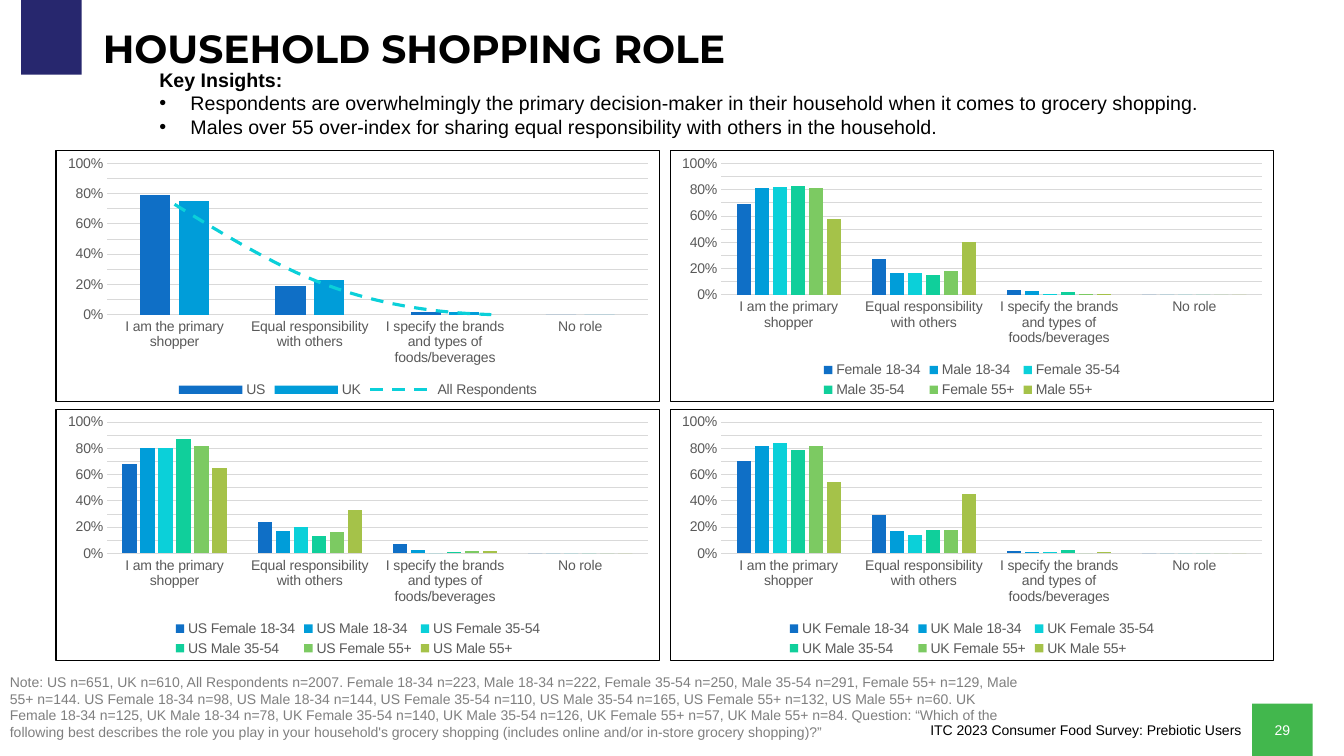
from dataclasses import dataclass

from lxml import etree
from pptx import Presentation
from pptx.chart.data import CategoryChartData
from pptx.dml.color import RGBColor
from pptx.enum.chart import XL_CHART_TYPE, XL_LEGEND_POSITION, XL_MARKER_STYLE, XL_TICK_MARK
from pptx.enum.dml import MSO_LINE
from pptx.enum.shapes import MSO_SHAPE
from pptx.enum.text import MSO_ANCHOR, MSO_AUTO_SIZE, PP_ALIGN
from pptx.oxml import parse_xml
from pptx.oxml.ns import nsdecls, qn
from pptx.util import Inches, Pt

COLUMNS = XL_CHART_TYPE.COLUMN_CLUSTERED
LEGEND_BOTTOM = XL_LEGEND_POSITION.BOTTOM
NO_MARKER = XL_MARKER_STYLE.NONE
NO_TICK = XL_TICK_MARK.NONE
DASH = MSO_LINE.DASH
RECTANGLE = MSO_SHAPE.RECTANGLE
TOP, MIDDLE = MSO_ANCHOR.TOP, MSO_ANCHOR.MIDDLE
NO_AUTOFIT = MSO_AUTO_SIZE.NONE
LEFT, CENTER, RIGHT = PP_ALIGN.LEFT, PP_ALIGN.CENTER, PP_ALIGN.RIGHT

SLIDE_WIDTH, SLIDE_HEIGHT = Inches(13.33), Inches(7.5)


@dataclass(frozen=True)
class Theme:
    heading_font: str = "Montserrat"
    body_font: str = "Arial"
    title_size: int = 28
    body_size: int = 14
    small_size: int = 10
    black: str = "000000"
    white: str = "FFFFFF"
    navy: str = "27276E"
    green: str = "42B74D"
    note_gray: str = "7F7F7F"
    label_gray: str = "595959"
    grid_gray: str = "D9D9D9"
    series: tuple = ("0F6FC6", "009DD9", "0BD0D9", "10CF9B", "7CCA62", "A5C249")


THEME = Theme()

# Content
INSIGHTS = (
    "Respondents are overwhelmingly the primary decision-maker in their household "
    "when it comes to grocery shopping.",
    "Males over 55 over-index for sharing equal responsibility with others in the household.",
)
NOTE = (
    "Note: US n=651, UK n=610, All Respondents n=2007. Female 18-34 n=223, Male 18-34 n=222, "
    "Female 35-54 n=250, Male 35-54 n=291, Female 55+ n=129, Male 55+ n=144. "
    "US Female 18-34 n=98, US Male 18-34 n=144, US Female 35-54 n=110, US Male 35-54 n=165, "
    "US Female 55+ n=132, US Male 55+ n=60. UK Female 18-34 n=125, UK Male 18-34 n=78, "
    "UK Female 35-54 n=140, UK Male 35-54 n=126, UK Female 55+ n=57, UK Male 55+ n=84. "
    "Question: “Which of the following best describes the role you play in your household's "
    "grocery shopping (includes online and/or in-store grocery shopping)?”"
)
ROLES = ("I am the primary shopper", "Equal responsibility with others",
         "I specify the brands and types of foods/beverages", "No role")
GROUPS = ("Female 18-34", "Male 18-34", "Female 35-54", "Male 35-54", "Female 55+", "Male 55+")
COUNTRY_SERIES = {
    "US": (0.79, 0.19, 0.02, 0),
    "UK": (0.75, 0.23, 0.02, 0),
    "All Respondents": (0.73, 0.24, 0.02, 0),
}
GROUP_VALUES = (
    (0.69, 0.27, 0.04, 0), (0.81, 0.17, 0.03, 0), (0.82, 0.17, 0.01, 0),
    (0.83, 0.15, 0.02, 0), (0.81, 0.18, 0.01, 0), (0.58, 0.4, 0.01, 0),
)
US_VALUES = (
    (0.68, 0.24, 0.07, 0), (0.8, 0.17, 0.03, 0), (0.8, 0.2, 0, 0),
    (0.87, 0.13, 0.01, 0), (0.82, 0.16, 0.02, 0), (0.65, 0.33, 0.02, 0),
)
UK_VALUES = (
    (0.7, 0.29, 0.02, 0), (0.82, 0.17, 0.01, 0), (0.84, 0.14, 0.01, 0),
    (0.79, 0.18, 0.03, 0), (0.82, 0.18, 0, 0), (0.54, 0.45, 0.01, 0),
)


def place(left, top, width, height):
    """Turn percentages of the slide into lengths."""
    return (int(SLIDE_WIDTH * left / 100), int(SLIDE_HEIGHT * top / 100),
            int(SLIDE_WIDTH * width / 100), int(SLIDE_HEIGHT * height / 100))


def chart_cell(column, row):
    return place(4.13 + 45.69 * column, 19.87 + 34.2 * row, 45.01, 33.33)


def style_font(font, size, color, bold=False, name=THEME.body_font):
    font.name, font.size, font.bold = name, Pt(size), bold
    font.color.rgb = RGBColor.from_string(color)


def write(paragraph, text, size, color, align=LEFT, **font_options):
    paragraph.alignment = align
    run = paragraph.add_run()
    run.text = text
    style_font(run.font, size, color, **font_options)


def prepare_frame(shape, anchor=TOP):
    frame = shape.text_frame
    frame.word_wrap, frame.auto_size, frame.vertical_anchor = True, NO_AUTOFIT, anchor
    return frame


def move(shape, area):
    shape.left, shape.top, shape.width, shape.height = area


def add_block(slide, area, color):
    block = slide.shapes.add_shape(RECTANGLE, *area)
    block.shadow.inherit = False
    block.fill.solid()
    block.fill.fore_color.rgb = RGBColor.from_string(color)
    block.line.fill.background()
    return block


def add_label(slide, area, text, color, align=LEFT):
    frame = prepare_frame(slide.shapes.add_textbox(*area))
    write(frame.paragraphs[0], text, THEME.small_size, color, align)


def set_bullet(paragraph, bulleted):
    properties = paragraph._p.get_or_add_pPr()
    indent = Inches(0.31) if bulleted else 0
    properties.set("marL", str(indent))
    properties.set("indent", str(-indent))
    if bulleted:
        color = etree.SubElement(properties, qn("a:buClr"))
        etree.SubElement(color, qn("a:srgbClr"), val=THEME.black)
        etree.SubElement(properties, qn("a:buFont"), typeface=THEME.body_font)
        etree.SubElement(properties, qn("a:buChar"), char="•")
    else:
        etree.SubElement(properties, qn("a:buNone"))


def fill_insights(body):
    frame = prepare_frame(body)
    for index, text in enumerate(("Key Insights:",) + INSIGHTS):
        paragraph = frame.add_paragraph() if index else frame.paragraphs[0]
        set_bullet(paragraph, bulleted=index > 0)
        paragraph.space_before = Pt(0)
        write(paragraph, text, THEME.body_size, THEME.black, bold=index == 0)


def style_axes(chart):
    category_axis, value_axis = chart.category_axis, chart.value_axis
    for axis in (category_axis, value_axis):
        axis.major_tick_mark = axis.minor_tick_mark = NO_TICK
        style_font(axis.tick_labels.font, THEME.small_size, THEME.label_gray)
    value_axis.minimum_scale, value_axis.maximum_scale = 0, 1
    value_axis.major_unit = 0.1
    value_axis.tick_labels.number_format = "0%"
    value_axis.tick_labels.number_format_is_linked = False
    value_axis.format.line.fill.background()
    for line in (category_axis.format.line, value_axis.major_gridlines.format.line):
        line.width = Pt(0.75)
        line.color.rgb = RGBColor.from_string(THEME.grid_gray)


def add_border(chart):
    border = parse_xml(
        f'<c:spPr {nsdecls("c", "a")}><a:noFill/><a:ln w="{int(Pt(0.75))}"><a:solidFill>'
        f'<a:srgbClr val="{THEME.black}"/></a:solidFill></a:ln></c:spPr>')
    chart._chartSpace.find(qn("c:chart")).addnext(border)


def turn_last_series_into_line(chart):
    bars = chart.plots[0]._element
    series = bars.findall(qn("c:ser"))[-1]
    for tag in ("c:invertIfNegative", "c:spPr"):
        for part in series.findall(qn(tag)):
            series.remove(part)
    line_plot = parse_xml(f'<c:lineChart {nsdecls("c")}><c:grouping val="standard"/>'
                          '<c:varyColors val="0"/><c:marker val="1"/></c:lineChart>')
    line_plot.insert(2, series)
    for axis in bars.findall(qn("c:axId")):
        etree.SubElement(line_plot, qn("c:axId"), val=axis.get("val"))
    bars.addnext(line_plot)

    trend = chart.plots[1].series[0]
    trend.smooth, trend.marker.style = True, NO_MARKER
    trend.format.line.width, trend.format.line.dash_style = Pt(2.25), DASH
    trend.format.line.color.rgb = RGBColor.from_string(THEME.series[2])


def add_role_chart(slide, area, series_values):
    data = CategoryChartData(number_format="0%")
    data.categories = ROLES
    for name, values in series_values.items():
        data.add_series(name, values)
    chart = slide.shapes.add_chart(COLUMNS, *area, data).chart
    style_font(chart.font, THEME.small_size, THEME.black)
    chart.has_title = False
    chart.has_legend = True
    chart.legend.position, chart.legend.include_in_layout = LEGEND_BOTTOM, False
    style_font(chart.legend.font, THEME.small_size, THEME.label_gray)
    plot = chart.plots[0]
    plot.gap_width, plot.overlap, plot.vary_by_categories = 219, -27, False
    for series, color in zip(plot.series, THEME.series):
        series.format.fill.solid()
        series.format.fill.fore_color.rgb = RGBColor.from_string(color)
    style_axes(chart)
    add_border(chart)
    return chart


def group_series(values, prefix=""):
    return {prefix + group: shares for group, shares in zip(GROUPS, values)}


def main():
    presentation = Presentation()
    presentation.slide_width, presentation.slide_height = SLIDE_WIDTH, SLIDE_HEIGHT
    slide = presentation.slides.add_slide(presentation.slide_layouts[1])

    # Corner block, footer and page number
    add_block(slide, place(1.58, 0, 4.5, 9.87), THEME.navy)
    add_label(slide, place(59.41, 94.8, 33.68, 3.6),
              "ITC 2023 Consumer Food Survey: Prebiotic Users", THEME.black, RIGHT)
    page = add_block(slide, place(93.17, 93.07, 4.5, 6.93), THEME.green)
    write(prepare_frame(page, MIDDLE).paragraphs[0], "29", THEME.small_size, THEME.white, CENTER)

    # Title and insights
    title, body = slide.placeholders
    move(title, place(6.9, 3.33, 86.27, 6.67))
    heading = prepare_frame(title, MIDDLE).paragraphs[0]
    heading.line_spacing = 0.9
    write(heading, "HOUSEHOLD SHOPPING ROLE", THEME.title_size, THEME.black,
          bold=True, name=THEME.heading_font)
    move(body, place(11.1, 8.27, 87.92, 20.13))
    fill_insights(body)
    add_label(slide, place(0, 88.4, 76.82, 10.27), NOTE, THEME.note_gray)

    # Charts
    turn_last_series_into_line(add_role_chart(slide, chart_cell(0, 0), COUNTRY_SERIES))
    add_role_chart(slide, chart_cell(1, 0), group_series(GROUP_VALUES))
    add_role_chart(slide, chart_cell(0, 1), group_series(US_VALUES, "US "))
    add_role_chart(slide, chart_cell(1, 1), group_series(UK_VALUES, "UK "))

    presentation.save("out.pptx")


if __name__ == "__main__":
    main()
